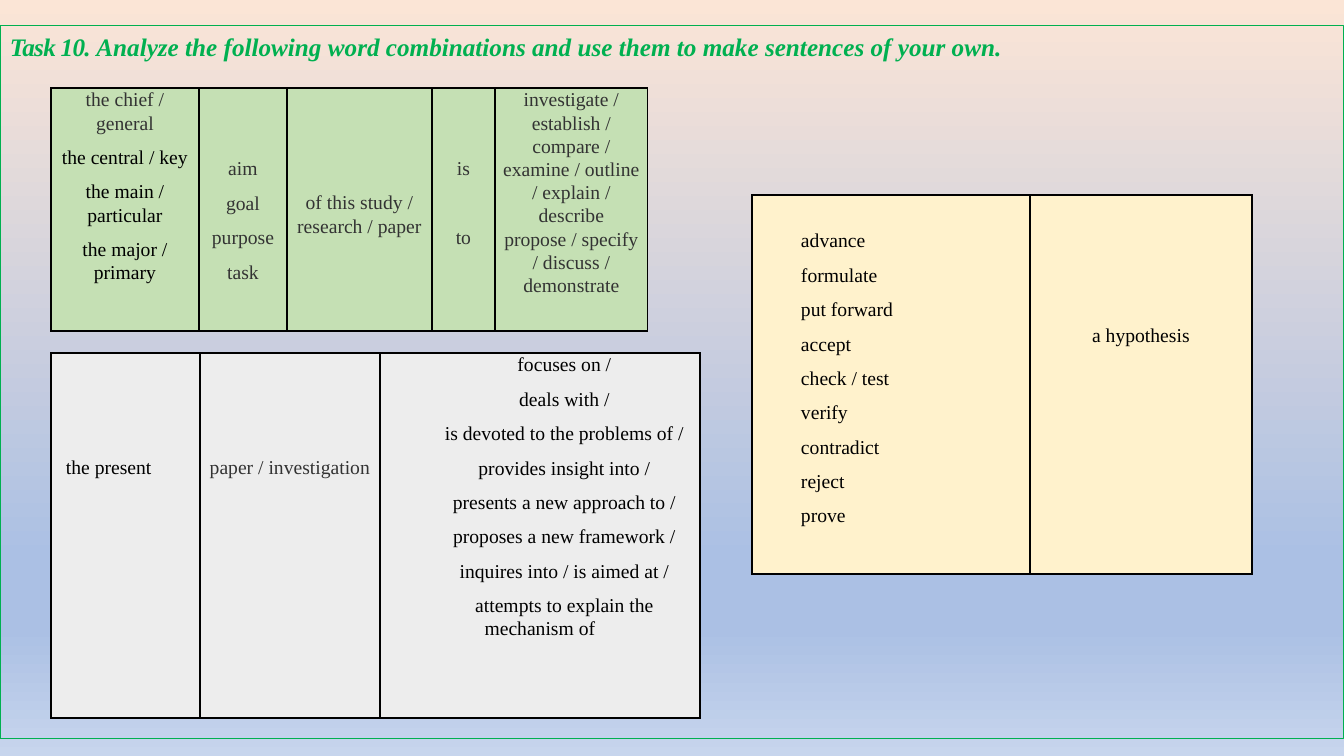
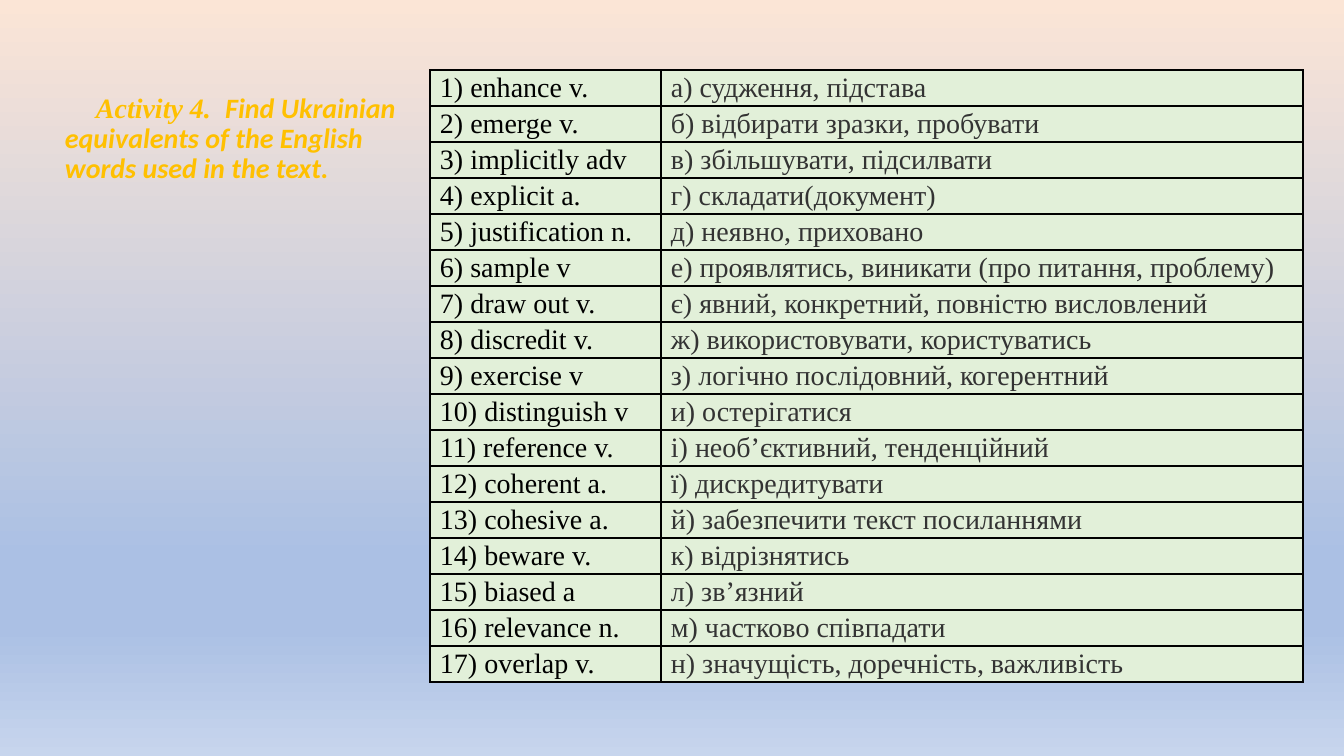
from dataclasses import dataclass
from itertools import accumulate
from typing import Any, Optional

from lxml.etree import SubElement
from pptx import Presentation
from pptx.dml.color import RGBColor
from pptx.enum.shapes import MSO_SHAPE as Shape
from pptx.enum.text import MSO_ANCHOR as Anchor, PP_ALIGN as Align
from pptx.oxml.ns import qn
from pptx.util import Emu, Pt

SLIDE_W, SLIDE_H = 1344, 756
EMU_PER_PX = 12192000 / SLIDE_W

SERIF, SANS = "Times New Roman", "Calibri"
COLORS = {
    "black": "000000", "gray": "333333", "green": "00B050", "gold": "FFC000",
    "leaf": "C5E0B4", "silver": "EDEDED", "cream": "FFF2CC", "mint": "E2F0D9",
}
BACKDROP_STOPS = ((0, "FBE5D6"), (74, "ABC0E4"), (83, "ABC0E4"), (100, "C7D5ED"))
TITLE_STYLE = {"bold": True, "italic": True}
LINE_SPACING, SPACE_AFTER = 1.07, 8


@dataclass(frozen=True)
class CellText:
    lines: tuple[str, ...]
    color: str = "black"
    lead_color: Optional[str] = None  # colour of the first line, if it differs
    align: Any = Align.CENTER
    top: int = 0
    left: Optional[int] = None
    indent: int = 0
    space_after: float = SPACE_AFTER


@dataclass(frozen=True)
class Grid:
    left: int
    top: int
    columns: tuple[int, ...]
    row_height: int
    fill: str
    rows: tuple[tuple[CellText, ...], ...]
    size: int = 14
    margin: int = 0


@dataclass(frozen=True)
class Title:
    runs: tuple[tuple[str, str, float], ...]  # text, font, letter spacing
    size: int
    color: str


def px(length: float) -> Emu:
    return Emu(round(length * EMU_PER_PX))


def rgb(name: str) -> RGBColor:
    return RGBColor.from_string(COLORS[name])


def apply(target: Any, values: dict[str, Any]) -> None:
    for name, value in values.items():
        setattr(target, name, value)


def add_run(paragraph: Any, text: str, color: str, font: dict[str, Any]) -> Any:
    run = paragraph.add_run()
    run.text = text
    apply(run.font, font)
    run.font.color.rgb = rgb(color)
    return run


def set_indent(paragraph: Any, first: int, left: int = 0) -> None:
    properties = paragraph._p.get_or_add_pPr()
    properties.set("marL", str(px(left)))
    properties.set("indent", str(px(first)))


def set_backdrop(master: Any) -> None:
    master.background.fill.gradient()
    gradient = next(master.element.iter(qn("a:gradFill")))
    stops = gradient.find(qn("a:gsLst"))
    for stop in list(stops):
        stops.remove(stop)
    for percent, color in BACKDROP_STOPS:
        stop = SubElement(stops, qn("a:gs"), pos=str(percent * 1000))
        SubElement(stop, qn("a:srgbClr"), val=color)
    gradient.find(qn("a:lin")).set("ang", "5400000")


def add_borders(cell: Any) -> None:
    properties = cell._tc.get_or_add_tcPr()
    for side in ("lnL", "lnR", "lnT", "lnB"):
        line = SubElement(properties, qn(f"a:{side}"), w=str(Pt(1)))
        fill = SubElement(line, qn("a:solidFill"))
        SubElement(fill, qn("a:srgbClr"), val=COLORS["black"])


def fill_cell(cell: Any, content: CellText, grid: Grid) -> None:
    left = grid.margin if content.left is None else content.left
    add_borders(cell)
    cell.fill.solid()
    cell.fill.fore_color.rgb = rgb(grid.fill)
    apply(cell, {
        "margin_left": px(left), "margin_right": px(grid.margin),
        "margin_top": px(content.top), "margin_bottom": 0,
        "vertical_anchor": Anchor.TOP,
    })
    frame = cell.text_frame
    last = len(content.lines) - 1
    for index, text in enumerate(content.lines):
        paragraph = frame.add_paragraph() if index else frame.paragraphs[0]
        apply(paragraph, {
            "alignment": content.align, "line_spacing": LINE_SPACING,
            "space_after": Pt(content.space_after if index < last else 0),
        })
        set_indent(paragraph, content.indent)
        color = content.color if index else content.lead_color or content.color
        add_run(paragraph, text, color, {"name": SERIF, "size": Pt(grid.size)})


def add_grid(slide: Any, grid: Grid) -> None:
    table = slide.shapes.add_table(
        len(grid.rows), len(grid.columns), px(grid.left), px(grid.top),
        px(sum(grid.columns)), px(grid.row_height * len(grid.rows))).table
    apply(table, {"first_row": False, "horz_banding": False})
    edges = [px(edge) for edge in accumulate(grid.columns, initial=0)]
    for column, start, end in zip(table.columns, edges, edges[1:]):
        column.width = Emu(end - start)
    for row, contents in zip(table.rows, grid.rows):
        row.height = px(grid.row_height)
        for cell, content in zip(row.cells, contents):
            fill_cell(cell, content, grid)


def write_title(frame: Any, title: Title) -> Any:
    frame.word_wrap = True
    paragraph = frame.paragraphs[0]
    paragraph.alignment = Align.LEFT
    for text, font, spacing in title.runs:
        style = TITLE_STYLE | {"name": font, "size": Pt(title.size)}
        run = add_run(paragraph, text, title.color, style)
        if spacing:
            run.font._element.set("spc", str(round(spacing * 100)))
    return paragraph


# Word combinations
TASK_TITLE = Title((
    ("Task 10. ", SERIF, -0.5),
    ("Analyze the following word combinations and use them to make sentences of your own.",
     SERIF, 0),
), 18, "green")

AIM_GRID = Grid(51, 88, (148, 88, 145, 63, 153), 243, "leaf", ((
    CellText(("the chief / general", "the central / key", "the main / particular",
              "the major / primary"), lead_color="gray"),
    CellText(("aim", "goal", "purpose", "task"), "gray", top=69),
    CellText(("of this study / research / paper",), "gray", top=103),
    CellText(("is", "to"), "gray", top=69, space_after=32.5),
    CellText(("investigate / establish / compare / examine / outline / explain / "
              "describe propose / specify / discuss / demonstrate",), "gray"),
),), margin=7)

PAPER_GRID = Grid(51, 353, (149, 180, 320), 365, "silver", ((
    CellText(("the present",), align=Align.JUSTIFY, top=103, left=15),
    CellText(("paper / investigation",), "gray", top=103),
    CellText(("focuses on /", "deals with /", "is devoted to the problems of /",
              "provides insight into /", "presents a new approach to /",
              "proposes a new framework /", "inquires into / is aimed at /",
              "attempts to explain the mechanism of"), indent=49),
),))

HYPOTHESIS_GRID = Grid(752, 195, (278, 222), 379, "cream", ((
    CellText(("advance", "formulate", "put forward", "accept", "check / test", "verify",
              "contradict", "reject", "prove"), align=Align.JUSTIFY, top=34, indent=49),
    CellText(("a hypothesis",), top=129),
),))

# Vocabulary matching
ACTIVITY_TITLE = Title((
    ("Activity 4.  ", SERIF, 0),
    ("Find Ukrainian equivalents of the English words used in the text.", SANS, 0),
), 20, "gold")

WORD_PAIRS = (
    ("enhance v.", "а) судження, підстава"),
    ("emerge v.", "б) відбирати зразки, пробувати"),
    ("implicitly adv", "в) збільшувати, підсилвати"),
    ("explicit a.", "г) складати(документ)"),
    ("justification n.", "д) неявно, приховано"),
    ("sample v", "е) проявлятись, виникати (про питання, проблему)"),
    ("draw out v.", "є) явний, конкретний, повністю висловлений"),
    ("discredit v.", "ж) використовувати, користуватись"),
    ("exercise v", "з) логічно послідовний, когерентний"),
    ("distinguish v", "и) остерігатися"),
    ("reference v.", "і) необ’єктивний, тенденційний"),
    ("coherent a.", "ї) дискредитувати"),
    ("cohesive a.", "й) забезпечити текст посиланнями"),
    ("beware v.", "к) відрізнятись"),
    ("biased a", "л) зв’язний"),
    ("relevance n.", "м) частково співпадати"),
    ("overlap v.", "н) значущість, доречність, важливість"),
)

VOCABULARY_GRID = Grid(430, 70, (231, 642), 36, "mint", tuple(
    (CellText((f"{number}) {word}",), align=Align.JUSTIFY),
     CellText((meaning,), "gray", align=Align.JUSTIFY))
    for number, (word, meaning) in enumerate(WORD_PAIRS, 1)
), size=20, margin=10)


def build_combinations(slide: Any) -> None:
    panel = slide.shapes.add_shape(Shape.RECTANGLE, 0, px(26), px(SLIDE_W), px(713))
    panel.shadow.inherit = False
    panel.fill.background()
    panel.line.color.rgb = rgb("green")
    panel.line.width = Pt(0.75)
    panel.text_frame.vertical_anchor = Anchor.TOP
    write_title(panel.text_frame, TASK_TITLE)
    for grid in (AIM_GRID, PAPER_GRID, HYPOTHESIS_GRID):
        add_grid(slide, grid)


def build_vocabulary(slide: Any) -> None:
    heading = slide.shapes.add_textbox(px(54), px(70), px(394), px(120)).text_frame
    heading.vertical_anchor = Anchor.BOTTOM
    paragraph = write_title(heading, ACTIVITY_TITLE)
    paragraph.line_spacing = 0.9
    set_indent(paragraph, 31, left=1)
    add_grid(slide, VOCABULARY_GRID)


def main() -> None:
    deck = Presentation()
    deck.slide_width, deck.slide_height = px(SLIDE_W), px(SLIDE_H)
    set_backdrop(deck.slide_master)
    for build in (build_combinations, build_vocabulary):
        build(deck.slides.add_slide(deck.slide_layouts[6]))
    deck.save("out.pptx")


if __name__ == "__main__":
    main()
